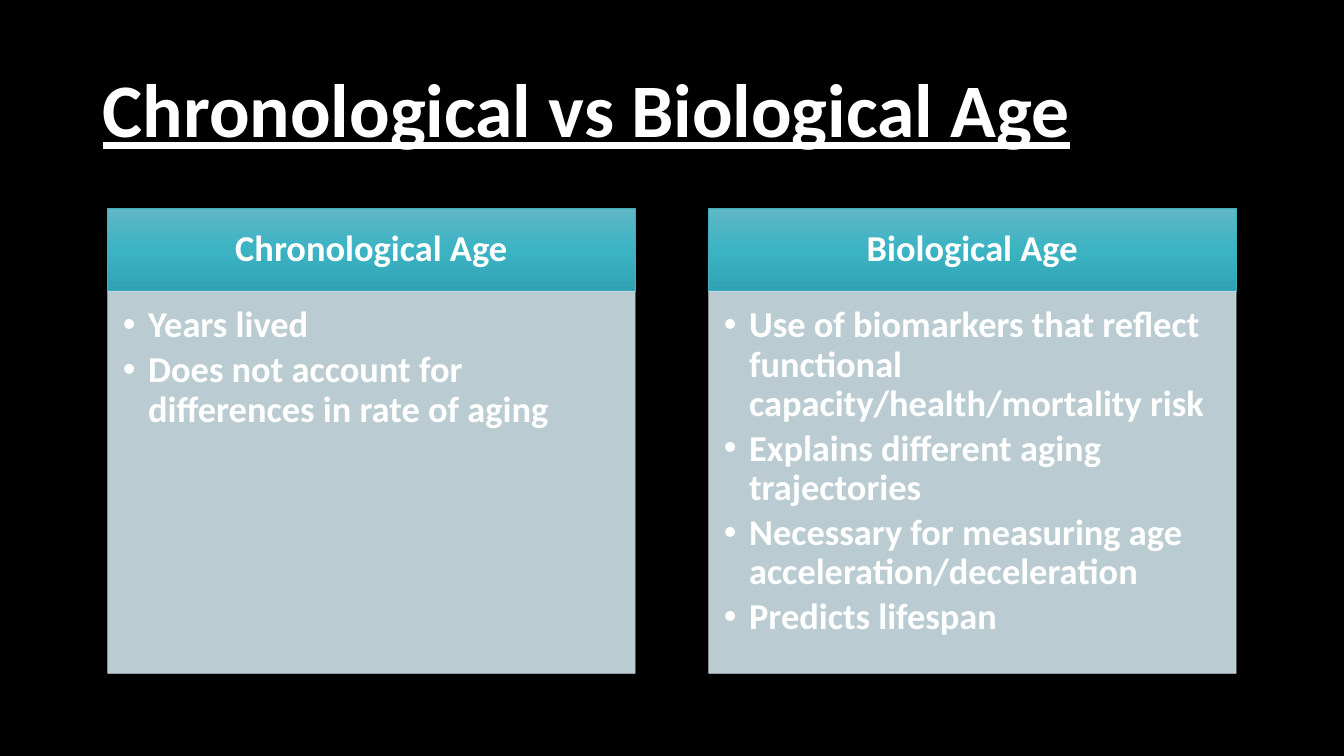
from copy import deepcopy

from lxml.etree import SubElement
from pptx import Presentation
from pptx.dml.color import RGBColor
from pptx.enum.shapes import MSO_SHAPE
from pptx.enum.text import MSO_ANCHOR, PP_ALIGN
from pptx.oxml.ns import qn
from pptx.util import Inches, Pt

BLACK = RGBColor(0x00, 0x00, 0x00)
WHITE = RGBColor(0xFF, 0xFF, 0xFF)
TEAL = RGBColor(0x41, 0xAE, 0xBD)
PALE = RGBColor(0xCF, 0xE3, 0xE8)
SHADES = [
    (0, RGBColor(0x5F, 0xB7, 0xC5)),
    (0.5, RGBColor(0x3B, 0xB3, 0xC3)),
    (1, RGBColor(0x2F, 0xA3, 0xB3)),
]

TITLE_FONT = {"name": "Calibri", "size": Pt(54), "bold": True, "underline": True}
BODY_FONT = {"name": "Calibri", "size": Pt(26), "bold": True}
HEAD_H = 0.82

COLUMNS = [
    ("Chronological Age", [
        "Years lived",
        "Does not account for differences in rate of aging",
    ]),
    ("Biological Age", [
        "Use of biomarkers that reflect functional capacity/health/mortality risk",
        "Explains different aging trajectories",
        "Necessary for measuring age acceleration/deceleration",
        "Predicts lifespan",
    ]),
]


def apply(target, values):
    for name, value in values.items():
        setattr(target, name, value)


def set_frame(frame, anchor, insets):
    names = ("margin_left", "margin_top", "margin_right", "margin_bottom")
    apply(frame, dict(zip(names, map(Inches, insets))))
    apply(frame, {"word_wrap": True, "vertical_anchor": anchor})


def write(para, text, font, align=PP_ALIGN.LEFT):
    apply(para, {"text": text, "alignment": align, "line_spacing": 0.9})
    apply(para.font, font)
    para.font.color.rgb = WHITE


def add_bullet(para):
    props = para._p.get_or_add_pPr()
    props.set("marL", str(Inches(0.25)))
    props.set("indent", str(Inches(-0.25)))
    SubElement(props, qn("a:buFont")).set("typeface", "Arial")
    SubElement(props, qn("a:buChar")).set("char", "•")


def add_panel(slide, box, color):
    panel = slide.shapes.add_shape(MSO_SHAPE.RECTANGLE, *map(Inches, box))
    panel.shadow.inherit = False
    panel.line.color.rgb = color
    panel.line.width = Pt(0.5)
    return panel


def shade(fill):
    """Fill from top to bottom with the three teal shades."""
    fill.gradient()
    fill.gradient_angle = 270
    first = fill.gradient_stops[0]._gs
    first.addnext(deepcopy(first))
    for stop, (place, color) in zip(fill.gradient_stops, SHADES):
        stop.position = place
        stop.color.rgb = color


def add_title(slide, box, text):
    frame = slide.shapes.add_textbox(*map(Inches, box)).text_frame
    set_frame(frame, MSO_ANCHOR.MIDDLE, (0.1, 0.05, 0.1, 0.05))
    write(frame.paragraphs[0], text, TITLE_FONT)


def add_column(slide, box, title, points):
    left, top, width, height = box

    # Header band
    head = add_panel(slide, (left, top, width, HEAD_H), TEAL)
    shade(head.fill)
    set_frame(head.text_frame, MSO_ANCHOR.MIDDLE, (0.2, 0.12, 0.2, 0.12))
    write(head.text_frame.paragraphs[0], title, BODY_FONT, PP_ALIGN.CENTER)

    # Body panel, slightly see-through
    body = add_panel(slide, (left, top + HEAD_H, width, height - HEAD_H), PALE)
    body.fill.solid()
    body.fill.fore_color.rgb = PALE
    for color in body._element.spPr.iter(qn("a:srgbClr")):
        SubElement(color, qn("a:alpha")).set("val", "90000")

    # Bullet points
    frame = body.text_frame
    set_frame(frame, MSO_ANCHOR.TOP, (0.15, 0.15, 0.2, 0.23))
    for index, point in enumerate(points):
        para = frame.add_paragraph() if index else frame.paragraphs[0]
        add_bullet(para)
        write(para, point, BODY_FONT)
        para.space_after = Pt(4)


def main():
    deck = Presentation()
    deck.slide_width, deck.slide_height = Inches(13.33), Inches(7.5)
    slide = deck.slides.add_slide(deck.slide_layouts[6])
    slide.background.fill.solid()
    slide.background.fill.fore_color.rgb = BLACK

    add_title(slide, (0.92, 0.4, 11.5, 1.45), "Chronological vs Biological Age")
    for index, (title, points) in enumerate(COLUMNS):
        add_column(slide, (1.07 + 5.96 * index, 2.07, 5.23, 4.61), title, points)
    deck.save("out.pptx")


if __name__ == "__main__":
    main()
